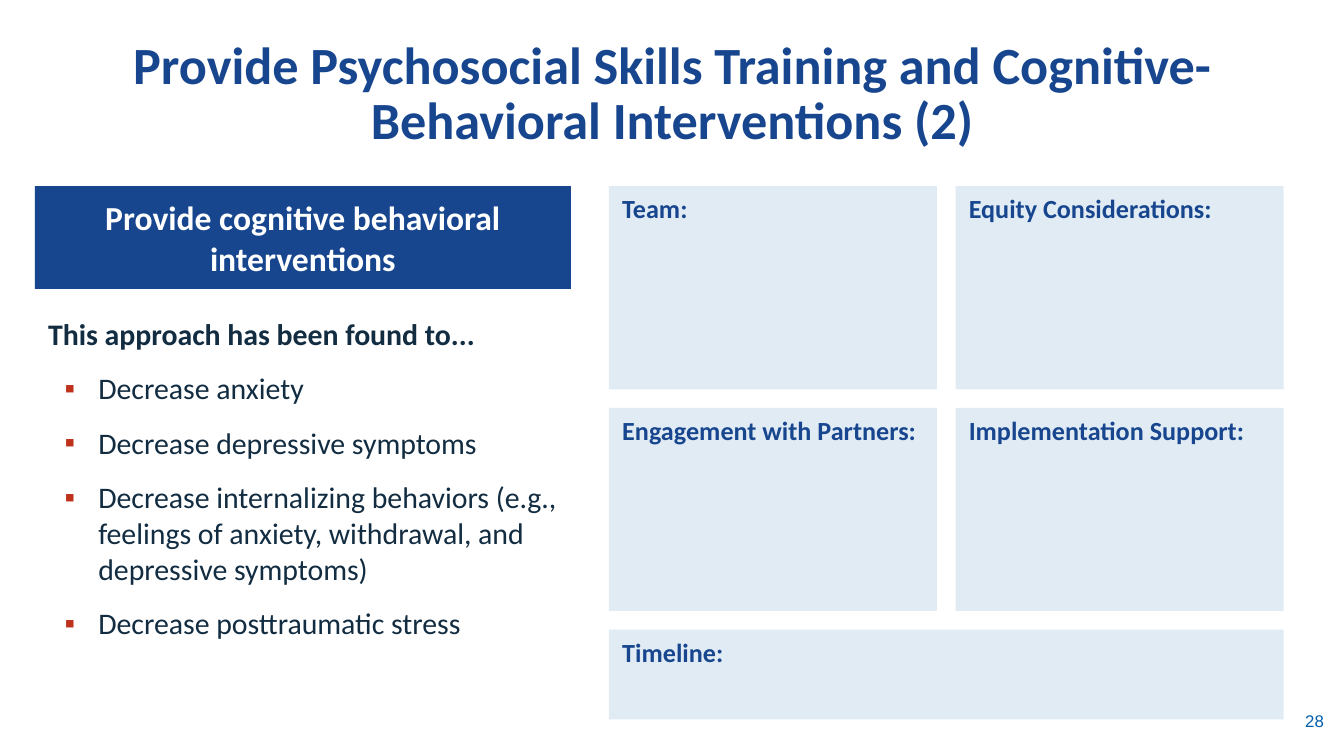
from lxml import etree
from pptx import Presentation
from pptx import util as u
from pptx.dml.color import RGBColor
from pptx.enum import shapes, text
from pptx.oxml.ns import qn

TITLE = ("Provide Psychosocial Skills Training and "
         "Cognitive-Behavioral Interventions (2)")
BANNER = "Provide cognitive behavioral interventions"
LEAD_IN = "This approach has been found to..."
FINDINGS = [
    "Decrease anxiety",
    "Decrease depressive symptoms",
    "Decrease internalizing behaviors (e.g., feelings of anxiety, "
    "withdrawal, and depressive symptoms)",
    "Decrease posttraumatic stress",
]
PANEL_ROWS = [  # height in cm, labels sharing the row
    (3.84, ["Team:", "Equity Considerations:"]),
    (3.84, ["Engagement with Partners:", "Implementation Support:"]),
    (1.70, ["Timeline:"]),
]
PAGE_NUMBER = "28"

THEME = {
    "font": "Calibri", "number_font": "Arial",
    "navy": "17468F", "ink": "122C41", "white": "FFFFFF",
    "bullet": "BF311B", "panel": "86B2D7", "number": "015DAA",
    "title_size": 28, "banner_size": 18, "body_size": 16,
    "panel_size": 14, "number_size": 9,
}
SLIDE_SIZE = 25.4, 14.29
LEFT_COLUMN, LEFT_WIDTH = 0.66, 10.13
GRID_LEFT, GRID_TOP, GRID_WIDTH, GAP = 11.51, 3.52, 12.75, 0.35
PANEL_ALPHA = 25  # percent opaque

ALIGN = text.PP_ALIGN
ANCHOR = text.MSO_ANCHOR


def color(name):
    return RGBColor.from_string(THEME[name])


def write(paragraph, words, size, ink, bold=False, align=ALIGN.LEFT, font="font"):
    paragraph.text = words
    paragraph.alignment = align
    paragraph.font.name = THEME[font]
    paragraph.font.size = u.Pt(THEME[size])
    paragraph.font.bold = bold
    paragraph.font.color.rgb = color(ink)


def add_text_box(page, place, anchor=ANCHOR.TOP):
    frame = page.shapes.add_textbox(*map(u.Cm, place)).text_frame
    frame.word_wrap = True
    frame.vertical_anchor = anchor
    return frame


def add_block(page, place, fill, anchor):
    block = page.shapes.add_shape(shapes.MSO_SHAPE.RECTANGLE, *map(u.Cm, place))
    block.shadow.inherit = False
    block.fill.solid()
    block.fill.fore_color.rgb = color(fill)
    block.line.fill.background()
    block.text_frame.word_wrap = True
    block.text_frame.vertical_anchor = anchor
    return block


def make_translucent(block, percent):
    tint = block.fill._xPr.find(".//" + qn("a:srgbClr"))
    etree.SubElement(tint, qn("a:alpha"), val=str(percent * 1000))


def add_bullet(paragraph):
    properties = paragraph._p.get_or_add_pPr()
    properties.set("marL", str(u.Cm(0.95)))
    properties.set("indent", str(-u.Cm(0.64)))
    tint = etree.SubElement(properties, qn("a:buClr"))
    etree.SubElement(tint, qn("a:srgbClr"), val=THEME["bullet"])
    etree.SubElement(properties, qn("a:buFont"), typeface=THEME["number_font"])
    etree.SubElement(properties, qn("a:buChar"), char="▪")


def add_title(page):
    frame = add_text_box(page, (1.27, 0.58, 22.86, 2.39), ANCHOR.BOTTOM)
    para = frame.paragraphs[0]
    write(para, TITLE, "title_size", "navy", bold=True, align=ALIGN.CENTER)
    para.line_spacing = u.Pt(30)


def add_findings(page):
    banner = add_block(page, (LEFT_COLUMN, GRID_TOP, LEFT_WIDTH, 1.94),
                       "navy", ANCHOR.MIDDLE)
    write(banner.text_frame.paragraphs[0], BANNER, "banner_size", "white",
          bold=True, align=ALIGN.CENTER)

    frame = add_text_box(page, (LEFT_COLUMN, 5.84, LEFT_WIDTH, 6.45))
    write(frame.paragraphs[0], LEAD_IN, "body_size", "ink", bold=True)
    for finding in FINDINGS:
        para = frame.add_paragraph()
        add_bullet(para)
        write(para, finding, "body_size", "ink")
        para.space_before = u.Pt(10)


def add_panels(page):
    top = GRID_TOP
    for height, labels in PANEL_ROWS:
        width = (GRID_WIDTH - GAP * (len(labels) - 1)) / len(labels)
        for column, label in enumerate(labels):
            left = GRID_LEFT + column * (width + GAP)
            panel = add_block(page, (left, top, width, height), "panel", ANCHOR.TOP)
            make_translucent(panel, PANEL_ALPHA)
            write(panel.text_frame.paragraphs[0], label, "panel_size", "navy",
                  bold=True)
        top += height + GAP


def add_page_number(page):
    frame = add_text_box(page, (23.09, 13.31, 2.18, 0.76))
    write(frame.paragraphs[0], PAGE_NUMBER, "number_size", "number",
          align=ALIGN.RIGHT, font="number_font")


def main():
    deck = Presentation()
    deck.slide_width, deck.slide_height = map(u.Cm, SLIDE_SIZE)
    page = deck.slides.add_slide(deck.slide_layouts[6])
    add_title(page)
    add_findings(page)
    add_panels(page)
    add_page_number(page)
    deck.save("out.pptx")


if __name__ == "__main__":
    main()
